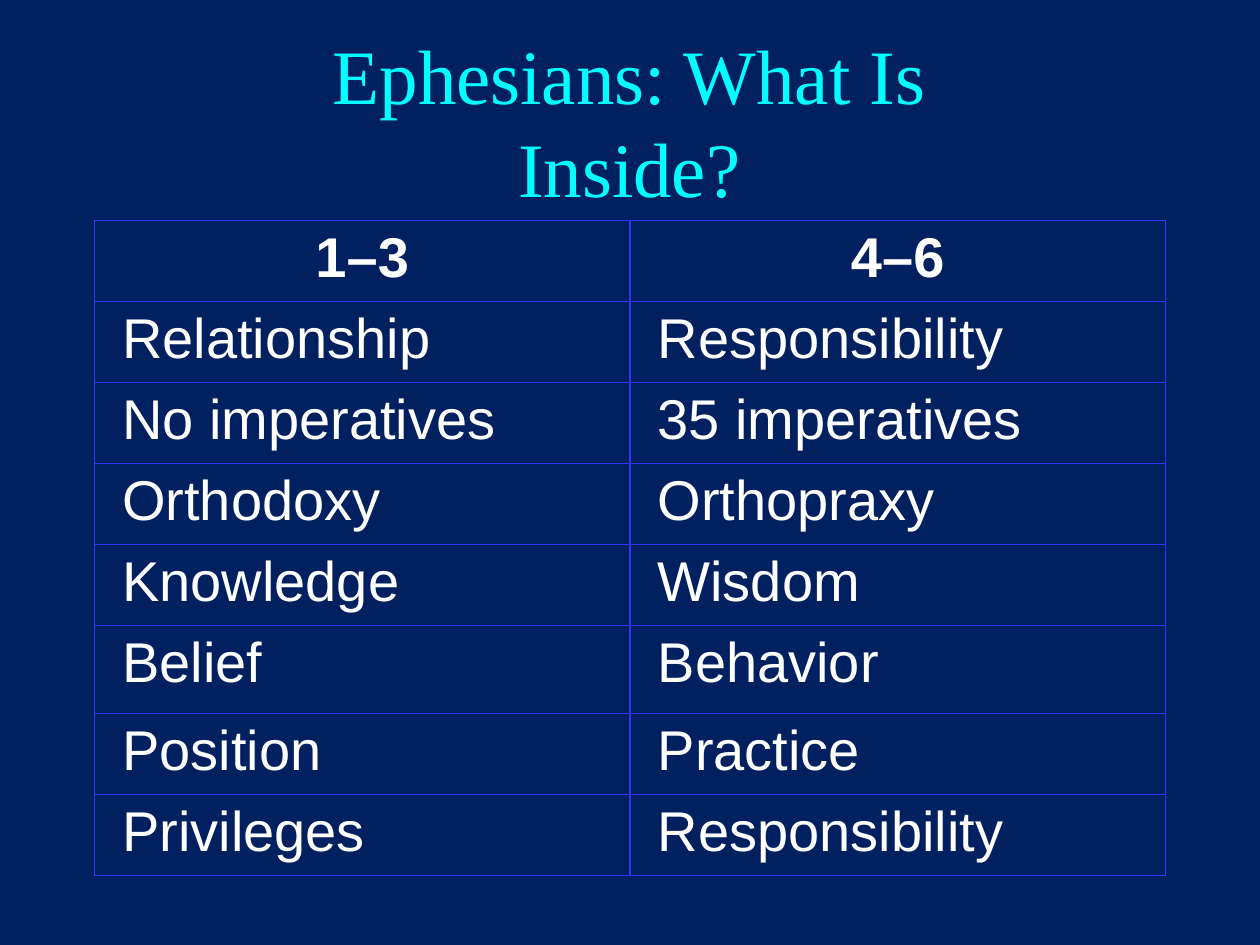
import pptx
import pptx.dml.color
import pptx.enum.text
import pptx.oxml
import pptx.oxml.ns
import pptx.util

COLORS = {"ground": "002060", "title": "00FFFF", "text": "FFFFFF", "rule": "3333FF"}
HEADINGS = ("1–3", "4–6")
CONTRASTS = [
    ("Relationship", "Responsibility"),
    ("No imperatives", "35 imperatives"),
    ("Orthodoxy", "Orthopraxy"),
    ("Knowledge", "Wisdom"),
    ("Belief", "Behavior"),
    ("Position", "Practice"),
    ("Privileges", "Responsibility"),
]
ROW_HEIGHTS = [0.7 if pair[0] == "Belief" else 4.5 / 7 for pair in [HEADINGS] + CONTRASTS]


class SlideBuilder:
    """Holds the style and the current slide, measured on a one-inch grid."""

    def __init__(self, columns=10, rows=7.5):
        self.deck = pptx.Presentation()
        self.deck.slide_width = pptx.util.Inches(columns)
        self.deck.slide_height = pptx.util.Inches(rows)
        self.slide = self.deck.slides.add_slide(self.deck.slide_layouts[5])
        ground = self.slide.background.fill
        ground.solid()
        ground.fore_color.rgb = self.color("ground")

    def color(self, role):
        return pptx.dml.color.RGBColor.from_string(COLORS[role])

    def wording(self, frame, words, role, align, **font_format):
        paragraph = frame.paragraphs[0]
        paragraph.alignment = align
        run = paragraph.add_run()
        run.text = words
        run.font.color.rgb = self.color(role)
        for name, value in font_format.items():
            setattr(run.font, name, value)
        return paragraph

    def title(self, words, left, top, width, height):
        heading = self.slide.shapes.title
        place = {"left": left, "top": top, "width": width, "height": height}
        for name, value in place.items():
            setattr(heading, name, pptx.util.Inches(value))
        heading.text_frame.vertical_anchor = pptx.enum.text.MSO_ANCHOR.MIDDLE
        self.wording(heading.text_frame, words, "title", pptx.enum.text.PP_ALIGN.CENTER,
                     name="Times New Roman", size=pptx.util.Pt(44))

    def rule_cell(self, cell):
        properties = cell._tc.get_or_add_tcPr()
        for side in "LRTB":
            properties.append(pptx.oxml.parse_xml(
                f'<a:ln{side} {pptx.oxml.ns.nsdecls("a")} w="{pptx.util.Pt(1)}">'
                f'<a:solidFill><a:srgbClr val="{COLORS["rule"]}"/></a:solidFill></a:ln{side}>'))
        cell.fill.background()

    def cell(self, cell, words, heading):
        self.rule_cell(cell)
        align = pptx.enum.text.PP_ALIGN
        paragraph = self.wording(cell.text_frame, words, "text",
                                 align.CENTER if heading else align.LEFT,
                                 name="Arial", size=pptx.util.Pt(32), bold=heading)
        properties = paragraph._p.get_or_add_pPr()
        properties.append(pptx.oxml.parse_xml(
            f'<a:spcBef {pptx.oxml.ns.nsdecls("a")}><a:spcPct val="20000"/></a:spcBef>'))
        if not heading:
            properties.set("marL", str(pptx.util.Inches(0.12)))
            properties.set("indent", "0")

    def table(self, pairs, heights, left, top, width):
        inches = pptx.util.Inches
        grid = self.slide.shapes.add_table(len(pairs), len(pairs[0]), inches(left), inches(top),
                                           inches(width), inches(sum(heights))).table
        for name in ("first_row", "horz_banding"):
            setattr(grid, name, False)
        for row, (pair, height) in enumerate(zip(pairs, heights)):
            grid.rows[row].height = inches(height)
            for column, words in enumerate(pair):
                self.cell(grid.cell(row, column), words, heading=row == 0)


def main():
    builder = SlideBuilder()
    builder.title("Ephesians: What Is Inside?", 1.58, 0.33, 6.83, 1.25)
    builder.table([HEADINGS] + CONTRASTS, ROW_HEIGHTS, 0.75, 1.75, 8.5)
    builder.deck.save("out.pptx")


if __name__ == "__main__":
    main()
